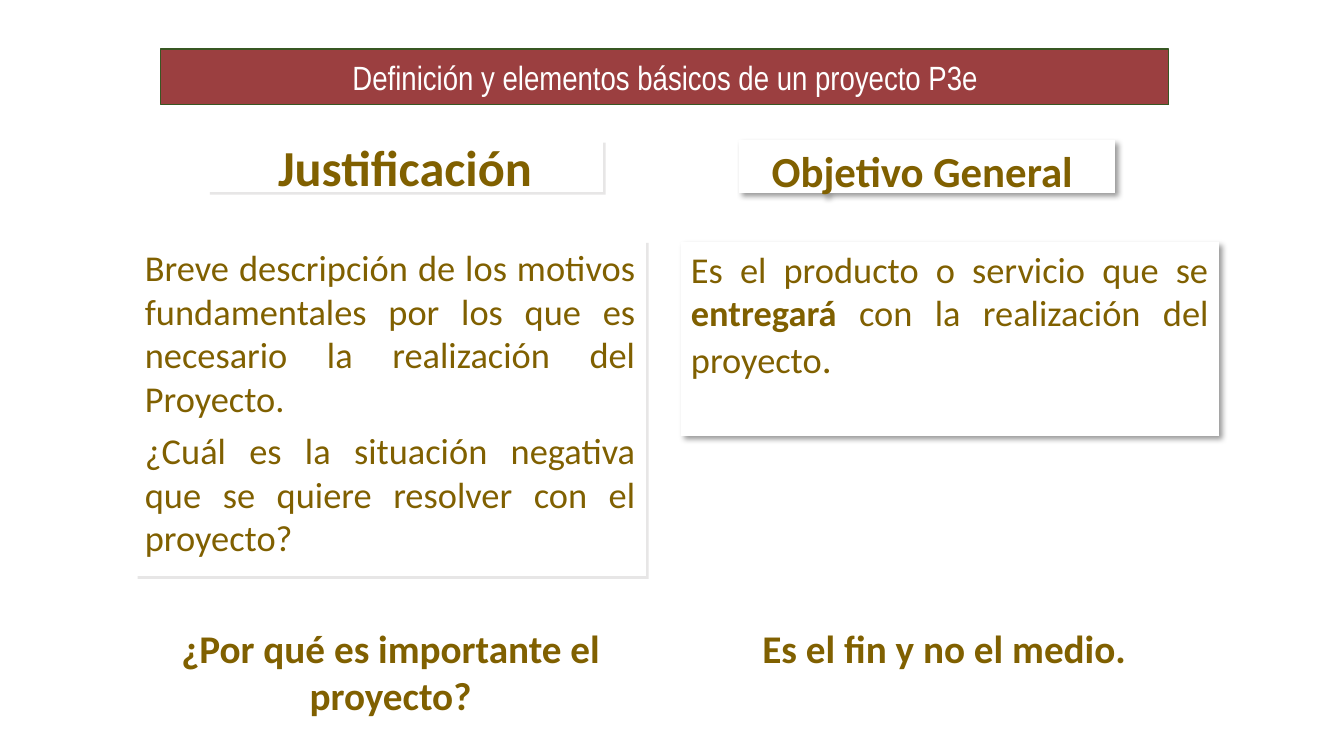
from lxml.etree import SubElement
from pptx import Presentation
from pptx.dml.color import RGBColor
from pptx.enum.shapes import MSO_SHAPE
from pptx.enum.text import MSO_ANCHOR, PP_ALIGN
from pptx.oxml.ns import qn
from pptx.util import Emu, Pt

EMU_PER_PX = 914400 / 100.8
COLORS = {
    "banner": "9B3F40",
    "banner_line": "385723",
    "panel": "FFFFFF",
    "light": "FFFFFF",
    "gold": "806000",
    "gray_shadow": "E7E6E6",
    "black_shadow": "000000",
}
FLAT_SHADOW = ("gray_shadow", 100, 0, 2.8)
SOFT_SHADOW = ("black_shadow", 40, 4, 3)


def px(length):
    return Emu(round(length * EMU_PER_PX))


def rgb(color):
    return RGBColor.from_string(COLORS[color])


def write(box, paragraphs, size, color="gold", font="Calibri", bold=False,
          align=PP_ALIGN.CENTER, anchor=MSO_ANCHOR.TOP):
    frame = box.text_frame
    frame.word_wrap = True
    frame.vertical_anchor = anchor
    for index, runs in enumerate(paragraphs):
        paragraph = frame.add_paragraph() if index else frame.paragraphs[0]
        paragraph.alignment = align
        paragraph.space_before = Pt(6 if index else 0)
        for text, changes in runs:
            run = paragraph.add_run()
            run.text = text
            run.font.name = font
            run.font.size = Pt(changes.get("size", size))
            run.font.bold = changes.get("bold", bold)
            run.font.color.rgb = rgb(color)


def cast_shadow(panel, color, opacity, blur, distance):
    effects = panel._element.spPr.find(qn("a:effectLst"))
    shadow = SubElement(effects, qn("a:outerShdw"), blurRad=str(Pt(blur)),
                        dist=str(Pt(distance)), dir="2700000",
                        algn="tl", rotWithShape="0")
    tint = SubElement(shadow, qn("a:srgbClr"), val=COLORS[color])
    SubElement(tint, qn("a:alpha"), val=str(opacity * 1000))


def add_panel(slide, place, fill="panel", line=None, shadow=None):
    panel = slide.shapes.add_shape(MSO_SHAPE.RECTANGLE, *map(px, place))
    panel.shadow.inherit = False
    panel.fill.solid()
    panel.fill.fore_color.rgb = rgb(fill)
    if line:
        panel.line.color.rgb = rgb(line)
        panel.line.width = Pt(0.75)
    else:
        panel.line.fill.background()
    if shadow:
        cast_shadow(panel, *shadow)
    return panel


def add_closing(slide, place, text):
    closing = slide.shapes.add_textbox(*map(px, place))
    write(closing, [[(text, {})]], 28, bold=True)


def main():
    deck = Presentation()
    deck.slide_width, deck.slide_height = px(1344), px(756)
    slide = deck.slides.add_slide(deck.slide_layouts[6])

    banner = add_panel(slide, (161, 49, 1008, 56), "banner", "banner_line")
    write(banner, [[("Definición y elementos básicos de un proyecto P3e", {})]],
          24, "light", "Arial Narrow", anchor=MSO_ANCHOR.MIDDLE)

    justification = add_panel(slide, (207, 140, 396, 52), shadow=FLAT_SHADOW)
    write(justification, [[("Justificación", {})]], 36, bold=True,
          anchor=MSO_ANCHOR.MIDDLE)

    motives = add_panel(slide, (135, 240, 511, 336), shadow=FLAT_SHADOW)
    write(motives, [
        [("Breve descripción de los motivos fundamentales por los que es "
          "necesario la realización del Proyecto.", {})],
        [("¿Cuál es la situación negativa que se quiere resolver con el "
          "proyecto?", {})],
    ], 26, align=PP_ALIGN.JUSTIFY)

    objective = add_panel(slide, (739, 140, 376, 53), shadow=SOFT_SHADOW)
    write(objective, [[("Objetivo General ", {})]], 30.6, bold=True)

    product = add_panel(slide, (681, 242, 538, 194), shadow=SOFT_SHADOW)
    write(product, [[
        ("Es el producto o servicio que se ", {}),
        ("entregará", {"bold": True}),
        (" con la realización del proyecto", {}),
        (". ", {"size": 28}),
    ]], 26, align=PP_ALIGN.JUSTIFY)

    add_closing(slide, (739, 619, 410, 57), "Es el fin y no el medio.")
    add_closing(slide, (135, 619, 511, 105),
                "¿Por qué es importante el proyecto?")

    deck.save("out.pptx")


if __name__ == "__main__":
    main()
